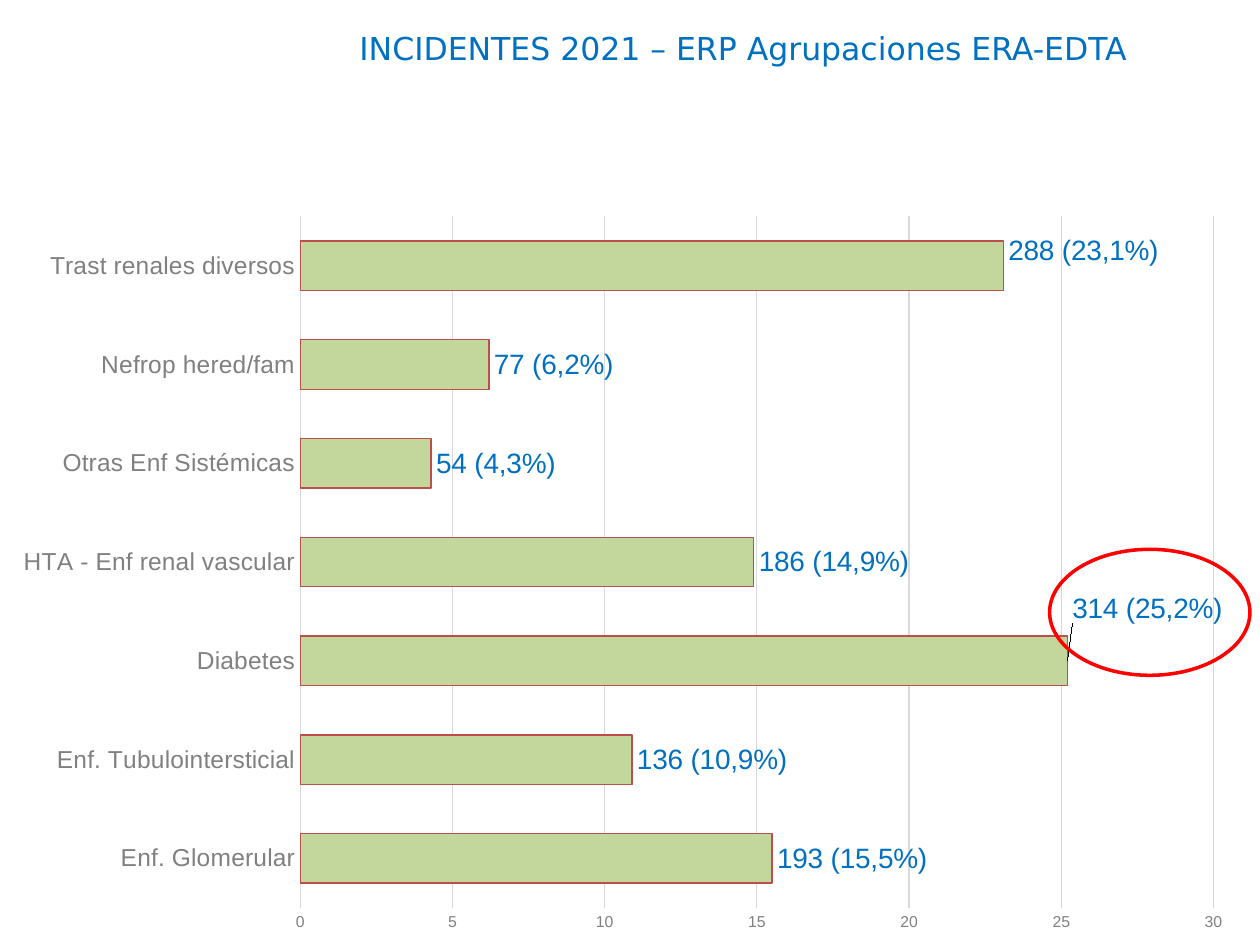
"""Builds a slide with a bar chart of 2021 incident cases by kidney disease group."""
import dataclasses

import lxml.etree
import pptx
import pptx.chart.data
import pptx.dml.color
import pptx.enum.chart
import pptx.enum.shapes
import pptx.enum.text
import pptx.oxml.ns
import pptx.util

Inches = pptx.util.Inches
Pt = pptx.util.Pt


@dataclasses.dataclass(frozen=True)
class Theme:
    title_font: str = "DejaVu Sans"
    chart_font: str = "Arial"
    accent: str = "0070C0"
    axis_text: str = "808080"
    grid: str = "D9D9D9"
    bar: str = "C3D69B"
    bar_edge: str = "BC4E4B"
    highlight: str = "FF0000"
    title_size: int = 18
    label_size: int = 16
    category_size: int = 14
    scale_size: int = 9
    thin: float = 0.75
    thick: float = 2


GROUPS = [
    ("Enf. Glomerular", 193, 15.5),
    ("Enf. Tubulointersticial", 136, 10.9),
    ("Diabetes", 314, 25.2),
    ("HTA - Enf renal vascular", 186, 14.9),
    ("Otras Enf Sistémicas", 54, 4.3),
    ("Nefrop hered/fam", 77, 6.2),
    ("Trast renales diversos", 288, 23.1),
]
LABEL_RISE = {"Diabetes": -0.07, "Trast renales diversos": -0.02}


class SlideBuilder:
    def __init__(self, slide, theme):
        self.slide = slide
        self.theme = theme

    def rgb(self, value):
        return pptx.dml.color.RGBColor.from_string(value)

    def style_font(self, font, name, size, color):
        font.name = name
        font.size = Pt(size)
        font.bold = False
        font.color.rgb = self.rgb(color)

    def style_line(self, line, color, width):
        line.color.rgb = self.rgb(color)
        line.width = Pt(width)

    def layout(self, position, **settings):
        layout = lxml.etree.Element(pptx.oxml.ns.qn("c:layout"))
        manual = lxml.etree.SubElement(layout, pptx.oxml.ns.qn("c:manualLayout"))
        for name, value in settings.items():
            lxml.etree.SubElement(manual, pptx.oxml.ns.qn(f"c:{name}")).set("val", str(value))
        for previous in position.findall(pptx.oxml.ns.qn("c:layout")):
            position.remove(previous)
        return layout

    def title(self, text, left, top, width, height):
        box = self.slide.shapes.add_textbox(Inches(left), Inches(top), Inches(width), Inches(height))
        frame = box.text_frame
        frame.word_wrap = True
        frame.text = text
        paragraph = frame.paragraphs[0]
        paragraph.alignment = pptx.enum.text.PP_ALIGN.CENTER
        self.style_font(paragraph.runs[0].font, self.theme.title_font,
                        self.theme.title_size, self.theme.accent)

    def bar_chart(self, groups, label_rise, left, top, width, height):
        data = pptx.chart.data.CategoryChartData()
        data.categories = [name for name, _, _ in groups]
        data.add_series("Series 1", [percent for _, _, percent in groups])
        chart = self.slide.shapes.add_chart(
            pptx.enum.chart.XL_CHART_TYPE.BAR_CLUSTERED,
            Inches(left), Inches(top), Inches(width), Inches(height), data).chart
        chart.has_legend = False
        chart.has_title = False
        chart.font.name = self.theme.chart_font
        chart.font.size = Pt(10)
        self.axes(chart)
        plot_area = chart.plots[0]._element.getparent()
        plot_area.insert(0, self.layout(
            plot_area, layoutTarget="inner", xMode="edge", yMode="edge",
            x=0.24, y=0.02, w=0.73, h=0.93))
        plot = chart.plots[0]
        plot.gap_width = 100
        plot.vary_by_categories = False
        bars = plot.series[0]
        bars.format.fill.solid()
        bars.format.fill.fore_color.rgb = self.rgb(self.theme.bar)
        self.style_line(bars.format.line, self.theme.bar_edge, self.theme.thin)
        self.labels(bars, groups, label_rise)

    def axes(self, chart):
        theme = self.theme
        categories, scale = chart.category_axis, chart.value_axis
        for axis, size in ((categories, theme.category_size), (scale, theme.scale_size)):
            axis.major_tick_mark = pptx.enum.chart.XL_TICK_MARK.NONE
            axis.minor_tick_mark = pptx.enum.chart.XL_TICK_MARK.NONE
            self.style_font(axis.tick_labels.font, theme.chart_font, size, theme.axis_text)
        self.style_line(categories.format.line, theme.grid, theme.thin)
        scale.format.line.fill.background()
        scale.minimum_scale, scale.maximum_scale, scale.major_unit = 0, 30, 5
        self.style_line(scale.major_gridlines.format.line, theme.grid, theme.thin)

    def labels(self, bars, groups, label_rise):
        theme = self.theme
        outside = pptx.enum.chart.XL_LABEL_POSITION.OUTSIDE_END
        bars.data_labels.show_value = True
        bars.data_labels.position = outside
        self.style_font(bars.data_labels.font, theme.chart_font, theme.label_size, theme.accent)
        for index, (_, cases, percent) in enumerate(groups):
            label = bars.points[index].data_label
            label.text_frame.text = f"{cases} ({percent}%)".replace(".", ",")
            label.position = outside
            run = label.text_frame.paragraphs[0].runs[0]
            self.style_font(run.font, theme.chart_font, theme.label_size, theme.accent)
        for (name, _, _), entry in zip(groups, bars._element.xpath(".//c:dLbl")):
            if name in label_rise:
                entry.insert(1, self.layout(entry, x=0, y=label_rise[name]))

    def ring(self, left, top, width, height):
        ring = self.slide.shapes.add_shape(
            pptx.enum.shapes.MSO_SHAPE.OVAL,
            Inches(left), Inches(top), Inches(width), Inches(height))
        ring.shadow.inherit = False
        ring.fill.background()
        self.style_line(ring.line, self.theme.highlight, self.theme.thick)


def main():
    deck = pptx.Presentation()
    deck.slide_width, deck.slide_height = Inches(10), Inches(7.5)
    builder = SlideBuilder(deck.slides.add_slide(deck.slide_layouts[6]), Theme())
    builder.title("INCIDENTES 2021 – ERP Agrupaciones ERA-EDTA", 2.58, 0.18, 6.64, 0.4)
    builder.bar_chart(GROUPS, LABEL_RISE, 0, 1.6, 9.93, 5.9)
    builder.ring(8.33, 4.36, 1.59, 1)
    deck.save("out.pptx")


if __name__ == "__main__":
    main()
